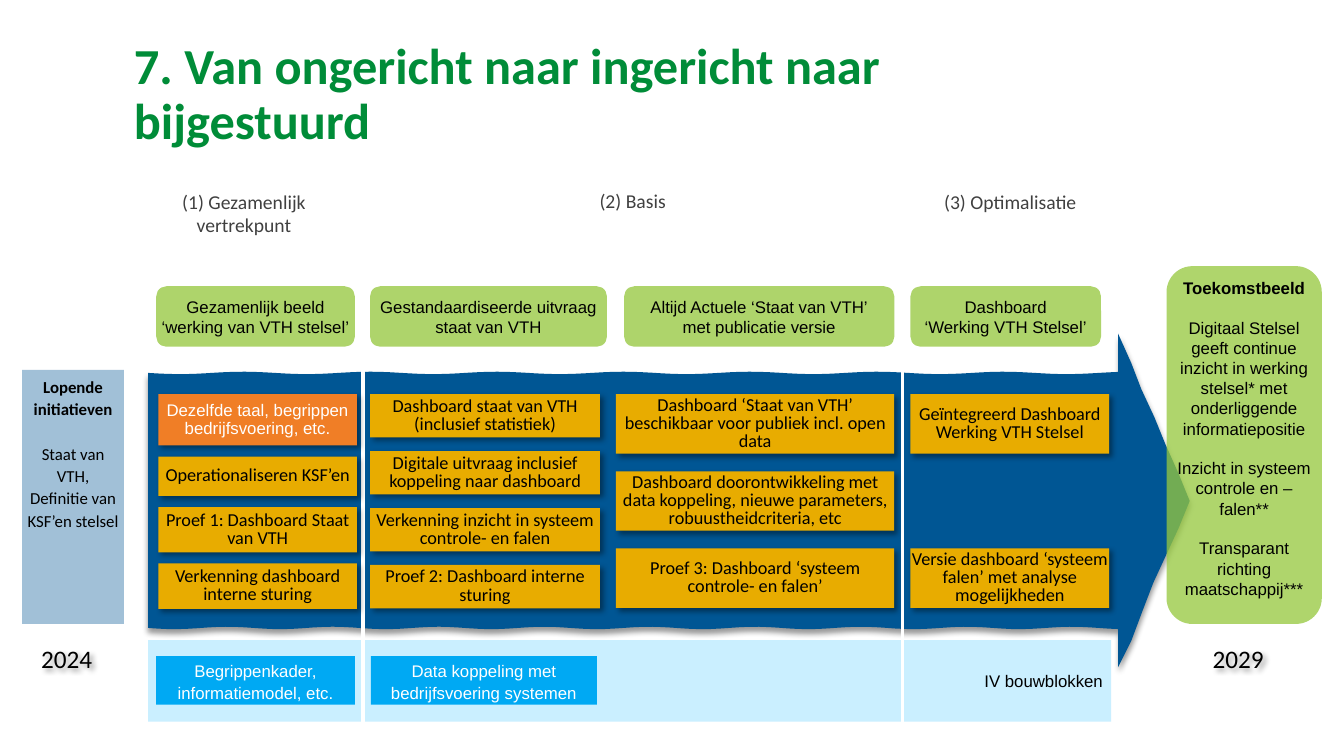
"""Build the roadmap slide from the 2024 starting point to the 2029 vision."""
from math import sin

from lxml import etree
from pptx import Presentation
from pptx.dml.color import RGBColor
from pptx.enum.shapes import MSO_SHAPE
from pptx.enum.text import MSO_ANCHOR, PP_ALIGN
from pptx.oxml.ns import qn
from pptx.util import Inches, Pt

RECTANGLE, ROUNDED = MSO_SHAPE.RECTANGLE, MSO_SHAPE.ROUNDED_RECTANGLE
TOP, MIDDLE, BOTTOM = MSO_ANCHOR.TOP, MSO_ANCHOR.MIDDLE, MSO_ANCHOR.BOTTOM
LEFT, CENTER, RIGHT = PP_ALIGN.LEFT, PP_ALIGN.CENTER, PP_ALIGN.RIGHT

THEME = {
    "navy": "005694", "green": "96C83F", "title": "008C38", "gold": "E8AC00",
    "orange": "F07E26", "blue": "00A9F3", "pale": "CAEFFF", "grey": "404040",
    "black": "000000", "white": "FFFFFF",
    "title_size": 36, "year_size": 18, "phase_size": 14, "card_size": 13, "body_size": 12,
    "sans": "Calibri", "plain": "Arial",
}


def style_shape(shape, fill=None, alpha=100, line=None, shadow_angle=None):
    """Set fill, transparency, outline and shadow."""
    shape.shadow.inherit = False
    if fill:
        shape.fill.solid()
        shape.fill.fore_color.rgb = RGBColor.from_string(THEME[fill])
        if alpha < 100:
            color = shape.fill._xPr.find(qn("a:solidFill"))[0]
            etree.SubElement(color, qn("a:alpha"), val=str(alpha * 1000))
    else:
        shape.fill.background()
    if line:
        shape.line.color.rgb = RGBColor.from_string(THEME[line])
        shape.line.width = Pt(2.25)
    else:
        shape.line.fill.background()
    if shadow_angle is not None:
        effects = shape._element.spPr.find(qn("a:effectLst"))
        shadow = etree.SubElement(effects, qn("a:outerShdw"), blurRad=str(Pt(4)), dist=str(Pt(3)),
                                  dir=str(shadow_angle * 60000), rotWithShape="0")
        color = etree.SubElement(shadow, qn("a:srgbClr"), val=THEME["black"])
        etree.SubElement(color, qn("a:alpha"), val="40000")


def add_box(box, paragraphs, kind=RECTANGLE, font="sans", size="body_size", color="black",
            align=CENTER, anchor=MIDDLE, margins=(0, 0.04), spacing=None, gap=0,
            bold_first=False, **style):
    """Add a styled box; gap is the space in points before later paragraphs."""
    shape = slide.shapes.add_shape(kind, *map(Inches, box))
    style_shape(shape, **style)
    frame = shape.text_frame
    side, edge = map(Inches, margins)
    settings = {"word_wrap": True, "vertical_anchor": anchor, "margin_left": side,
                "margin_right": side, "margin_top": edge, "margin_bottom": edge}
    for name, value in settings.items():
        setattr(frame, name, value)
    for index, text in enumerate(paragraphs):
        paragraph = frame.add_paragraph() if index else frame.paragraphs[0]
        paragraph.text = text
        paragraph.alignment = align
        if spacing:
            paragraph.line_spacing = spacing
        if index and gap:
            paragraph.space_before = Pt(gap)
        for run in paragraph.runs:
            formats = {"name": THEME[font], "size": Pt(THEME[size]),
                       "bold": bold_first and index == 0}
            for name, value in formats.items():
                setattr(run.font, name, value)
            run.font.color.rgb = RGBColor.from_string(THEME[color])


presentation = Presentation()
presentation.slide_width, presentation.slide_height = Inches(13.33), Inches(7.5)
slide = presentation.slides.add_slide(presentation.slide_layouts[6])

phase = {"size": "phase_size", "color": "grey", "anchor": TOP, "margins": (0.1, 0.05)}
add_box((8.97, 1.83, 2.1, 5.05), ["(3) Optimalisatie"], **phase)
add_box((1.37, 1.83, 2.1, 5.05), ["(1) Gezamenlijk vertrekpunt"], **phase)
add_box((1.47, 6.35, 9.55, 0.81), ["IV bouwblokken"], font="plain", align=RIGHT,
        margins=(0.08, 0.04), fill="pale")

wave_x = [1.47 + 0.0962 * step for step in range(101)]
top_edge = [(x, 3.7 + 0.012 * sin(5 * (x - 1.47))) for x in wave_x]
bottom_edge = [(x, 6.23 + 0.012 * sin(6 * (x - 1.47))) for x in reversed(wave_x)]
head = [(11.09, 3.31), (11.22, 3.6), (11.32, 3.86), (11.45, 4.14), (11.56, 4.41),
        (11.69, 4.7), (11.8, 4.97), (11.69, 5.24), (11.56, 5.52), (11.44, 5.78),
        (11.34, 6.04), (11.22, 6.36), (11.09, 6.62)]
outline = top_edge + head + bottom_edge
builder = slide.shapes.build_freeform(Inches(1.47), Inches(3.7), scale=1.0)
builder.add_line_segments([(Inches(x), Inches(y)) for x, y in outline[1:]], close=True)
style_shape(builder.convert_to_shape(), fill="navy", shadow_angle=90)

add_box((0.22, 3.67, 1.01, 2.52),
        ["Lopende initiatieven", "Staat van VTH, Definitie van KSF’en stelsel"],
        anchor=TOP, margins=(0.04, 0.04), spacing=Pt(16), gap=16, bold_first=True,
        fill="navy", alpha=37)
add_box((1.23, 0.39, 9.99, 1.12), ["7. Van ongericht naar ingericht naar bijgestuurd"],
        size="title_size", color="title", align=LEFT, margins=(0.1, 0.05), spacing=0.9,
        bold_first=True)
for left, year in ((0.31, "2024"), (11.93, "2029")):
    add_box((left, 6.36, 0.8, 0.37), [year], size="year_size", align=LEFT, anchor=BOTTOM,
            margins=(0.1, 0.05), shadow_angle=45)
add_box((3.6, 1.83, 5.35, 5.46), ["(2) Basis"], line="white", **phase)
add_box((11.57, 2.64, 1.54, 3.55),
        ["Toekomstbeeld",
         "Digitaal Stelsel geeft continue inzicht in werking stelsel* met onderliggende "
         "informatiepositie",
         "Inzicht in systeem controle en –falen**",
         "Transparant richting maatschappij***"],
        kind=ROUNDED, font="plain", anchor=TOP, gap=14, bold_first=True, fill="green", alpha=76)

results = [
    (1.55, 1.97, "Gezamenlijk beeld ‘werking van VTH stelsel’"),
    (3.67, 2.35, "Gestandaardiseerde uitvraag staat van VTH"),
    (6.19, 2.68, "Altijd Actuele ‘Staat van VTH’\nmet publicatie versie"),
    (9.03, 1.89, "Dashboard\n‘Werking VTH Stelsel’"),
]
for left, width, text in results:
    add_box((left, 2.84, width, 0.6), [text], kind=ROUNDED, font="plain", fill="green", alpha=77)

add_box((1.57, 3.91, 1.97, 0.51), ["Dezelfde taal, begrippen bedrijfsvoering, etc."],
        font="plain", color="white", margins=(0.04, 0.04), spacing=Pt(13),
        fill="orange", shadow_angle=45)
card_columns = [
    (1.57, 1.97, 4.47, 0.56, 0.45, [
        ["Operationaliseren KSF’en"],
        ["Proef 1: Dashboard Staat van VTH"],
        ["Verkenning dashboard interne sturing"]]),
    (3.67, 2.28, 3.91, 0.565, 0.43, [
        ["Dashboard staat van VTH (inclusief statistiek)"],
        ["Digitale uitvraag inclusief koppeling naar dashboard"],
        ["Verkenning inzicht in systeem controle- en falen"],
        ["Proef 2: Dashboard interne sturing"]]),
    (6.11, 2.76, 3.91, 0.765, 0.59, [
        ["Dashboard ‘Staat van VTH’", "beschikbaar voor publiek incl. open data"],
        ["Dashboard doorontwikkeling met",
         "data koppeling, nieuwe parameters, robuustheidcriteria, etc"],
        ["Proef 3: Dashboard ‘systeem controle- en falen’"]]),
    (9.03, 1.97, 3.91, 1.53, 0.59, [
        ["Geïntegreerd Dashboard", "Werking VTH Stelsel"],
        ["Versie dashboard ‘systeem falen’ met analyse mogelijkheden"]]),
]
for left, width, top, step, height, cards in card_columns:
    for row, paragraphs in enumerate(cards):
        inset = 0.06 if paragraphs == ["Operationaliseren KSF’en"] else 0
        add_box((left, top + row * step + inset, width, height - inset), paragraphs,
                size="card_size", spacing=Pt(13), fill="gold", shadow_angle=45)

building_blocks = [
    (1.55, 1.97, "Begrippenkader, informatiemodel, etc."),
    (3.68, 2.24, "Data koppeling met bedrijfsvoering systemen"),
]
for left, width, text in building_blocks:
    add_box((left, 6.51, width, 0.48), [text], font="plain", color="white",
            margins=(0.04, 0.04), spacing=Pt(16), fill="blue")

presentation.save("out.pptx")
